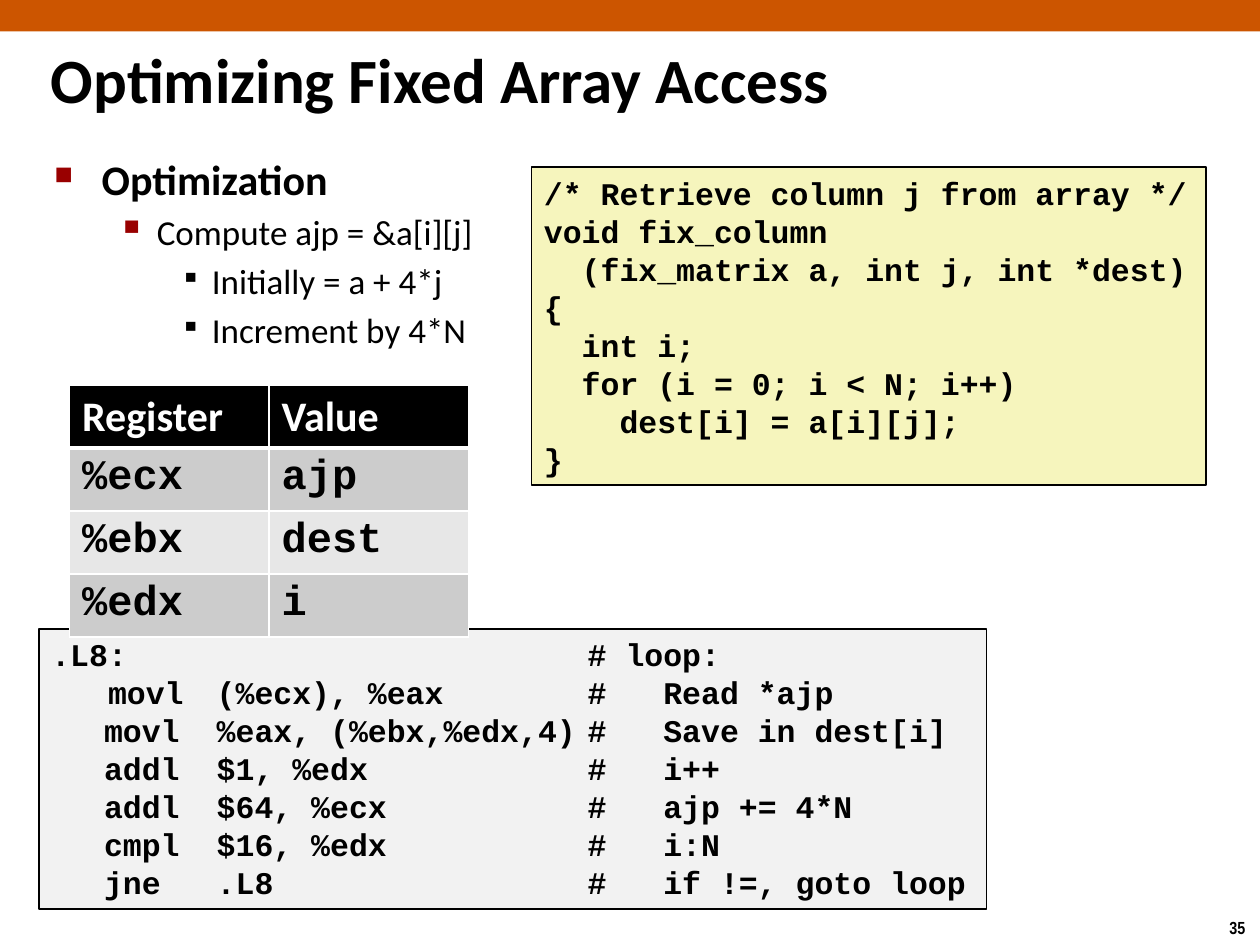
from dataclasses import dataclass
from typing import Optional

from lxml.etree import SubElement
from pptx import Presentation
from pptx.dml.color import RGBColor
from pptx.enum.shapes import MSO_SHAPE
from pptx.enum.text import MSO_ANCHOR, PP_ALIGN
from pptx.oxml.ns import qn
from pptx.util import Pt

COLORS = {
    "bar": "CC5500", "text": "000000", "bullet": "990000",
    "source": "F6F5BD", "assembly": "F2F2F2", "line": "000000",
    "header": "000000", "header_text": "FFFFFF", "border": "FFFFFF",
    "odd_row": "CCCCCC", "even_row": "E7E7E7",
}
BODY_FONT, CODE_FONT = "Calibri", "Courier New"


@dataclass
class Box:
    left: float
    top: float
    width: float
    height: float

    def lengths(self) -> tuple:
        return Pt(self.left), Pt(self.top), Pt(self.width), Pt(self.height)


@dataclass
class Bullet:
    text: str
    level: int
    size: float
    margin: float
    hanging: float
    symbol: str
    symbol_percent: int
    symbol_color: str
    bold: bool = False


@dataclass
class CodePanel:
    box: Box
    fill: str
    code: str
    tabs: tuple = ()


BULLETS = [
    Bullet("Optimization", 0, 24, 27, 27, "■", 60, "bullet", True),
    Bullet("Compute ajp = &a[i][j]", 1, 20, 58.5, 22.5, "▪", 110, "bullet"),
    Bullet("Initially = a + 4*j", 2, 20, 90, 18, "▪", 80, "text"),
    Bullet("Increment by 4*N", 2, 20, 90, 18, "▪", 80, "text"),
]

SOURCE_CODE = """/* Retrieve column j from array */
void fix_column
  (fix_matrix a, int j, int *dest)
{
  int i;
  for (i = 0; i < N; i++)
    dest[i] = a[i][j];
}"""

ASSEMBLY_CODE = """.L8:\t\t# loop:
   movl\t(%ecx), %eax\t#   Read *ajp
\t  movl\t%eax, (%ebx,%edx,4)\t#   Save in dest[i]
\t  addl\t$1, %edx\t#   i++
\t  addl\t$64, %ecx\t#   ajp += 4*N
\t  cmpl\t$16, %edx\t#   i:N
\t  jne\t.L8\t#   if !=, goto loop"""

PANELS = [
    CodePanel(Box(303.75, 95.5, 385.5, 181.5), "source", SOURCE_CODE),
    CodePanel(Box(22.25, 359.5, 541.5, 160), "assembly", ASSEMBLY_CODE, (8.5, 94.5, 306.5)),
]

REGISTERS = [("Register", "Value"), ("%ecx", "ajp"), ("%ebx", "dest"), ("%edx", "i")]


def color(name: str) -> RGBColor:
    return RGBColor.from_string(COLORS[name])


def style_runs(paragraph, font_name: str, size: float, color_name: str = "text",
               bold: bool = True) -> None:
    for run in paragraph.runs:
        run.font.name = font_name
        run.font.size = Pt(size)
        run.font.bold = bold
        run.font.color.rgb = color(color_name)


def add_rectangle(slide, box: Box, fill: str, line: Optional[str] = None):
    shape = slide.shapes.add_shape(MSO_SHAPE.RECTANGLE, *box.lengths())
    shape.shadow.inherit = False
    shape.fill.solid()
    shape.fill.fore_color.rgb = color(fill)
    if line:
        shape.line.color.rgb = color(line)
        shape.line.width = Pt(1)
    else:
        shape.line.fill.background()
    return shape


def add_label(slide, box: Box, text: str, font_name: str, size: float, wrap: bool = True):
    text_frame = slide.shapes.add_textbox(*box.lengths()).text_frame
    text_frame.word_wrap = wrap
    text_frame.vertical_anchor = MSO_ANCHOR.MIDDLE
    text_frame.text = text
    style_runs(text_frame.paragraphs[0], font_name, size)


def add_bullets(slide, box: Box, bullets: list[Bullet]) -> None:
    text_frame = slide.shapes.add_textbox(*box.lengths()).text_frame
    text_frame.word_wrap = True
    text_frame.text = "\n".join(bullet.text for bullet in bullets)
    for paragraph, bullet in zip(text_frame.paragraphs, bullets):
        paragraph.level = bullet.level
        paragraph.space_before = Pt(bullet.size * 0.2)
        style_runs(paragraph, BODY_FONT, bullet.size, bold=bullet.bold)
        properties = paragraph._p.get_or_add_pPr()
        properties.set("marL", str(Pt(bullet.margin)))
        properties.set("indent", str(-Pt(bullet.hanging)))
        bullet_color = SubElement(properties, qn("a:buClr"))
        SubElement(bullet_color, qn("a:srgbClr"), val=COLORS[bullet.symbol_color])
        SubElement(properties, qn("a:buSzPct"), val=str(bullet.symbol_percent * 1000))
        SubElement(properties, qn("a:buChar"), char=bullet.symbol)


def add_code_panel(slide, panel: CodePanel) -> None:
    text_frame = add_rectangle(slide, panel.box, panel.fill, "line").text_frame
    text_frame.word_wrap = True
    text_frame.vertical_anchor = MSO_ANCHOR.TOP
    text_frame.text = panel.code
    for paragraph in text_frame.paragraphs:
        paragraph.alignment = PP_ALIGN.LEFT
        paragraph.line_spacing = Pt(21.7)
        style_runs(paragraph, CODE_FONT, 18)
        if panel.tabs:
            tab_list = SubElement(paragraph._p.get_or_add_pPr(), qn("a:tabLst"))
            for position in panel.tabs:
                SubElement(tab_list, qn("a:tab"), pos=str(Pt(position)), algn="l")


def add_cell_borders(cell, widths: dict[str, float]) -> None:
    properties = cell._tc.get_or_add_tcPr()
    for side, width in widths.items():
        border = SubElement(properties, qn(f"a:ln{side}"), w=str(Pt(width)))
        fill = SubElement(border, qn("a:solidFill"))
        SubElement(fill, qn("a:srgbClr"), val=COLORS["border"])


def add_register_table(slide, box: Box, rows: list[tuple[str, str]]) -> None:
    table = slide.shapes.add_table(len(rows), len(rows[0]), *box.lengths()).table
    for row_index, values in enumerate(rows):
        is_header = row_index == 0
        fill = "header" if is_header else "odd_row" if row_index % 2 else "even_row"
        top = 3 if row_index == 1 else 1
        bottom = 3 if is_header else 1
        for column_index, value in enumerate(values):
            cell = table.cell(row_index, column_index)
            cell.text = value
            style_runs(cell.text_frame.paragraphs[0],
                       BODY_FONT if is_header else CODE_FONT, 24,
                       "header_text" if is_header else "text")
            add_cell_borders(cell, {"L": 1, "R": 1, "T": top, "B": bottom})
            cell.fill.solid()
            cell.fill.fore_color.rgb = color(fill)


def main() -> None:
    presentation = Presentation()
    presentation.slide_width, presentation.slide_height = Pt(720), Pt(540)
    slide = presentation.slides.add_slide(presentation.slide_layouts[6])
    add_rectangle(slide, Box(0, 0, 720, 18), "bar")
    add_label(slide, Box(695.5, 520.5, 24.5, 19.5), "35", "Arial Narrow", 10, wrap=False)
    add_label(slide, Box(22, 22.5, 500, 45), "Optimizing Fixed Array Access", BODY_FONT, 36)
    add_bullets(slide, Box(24, 84, 324, 308), BULLETS)
    for panel in PANELS:
        add_code_panel(slide, panel)
    add_register_table(slide, Box(39.75, 220, 228, 116.8), REGISTERS)
    presentation.save("out.pptx")


if __name__ == "__main__":
    main()
